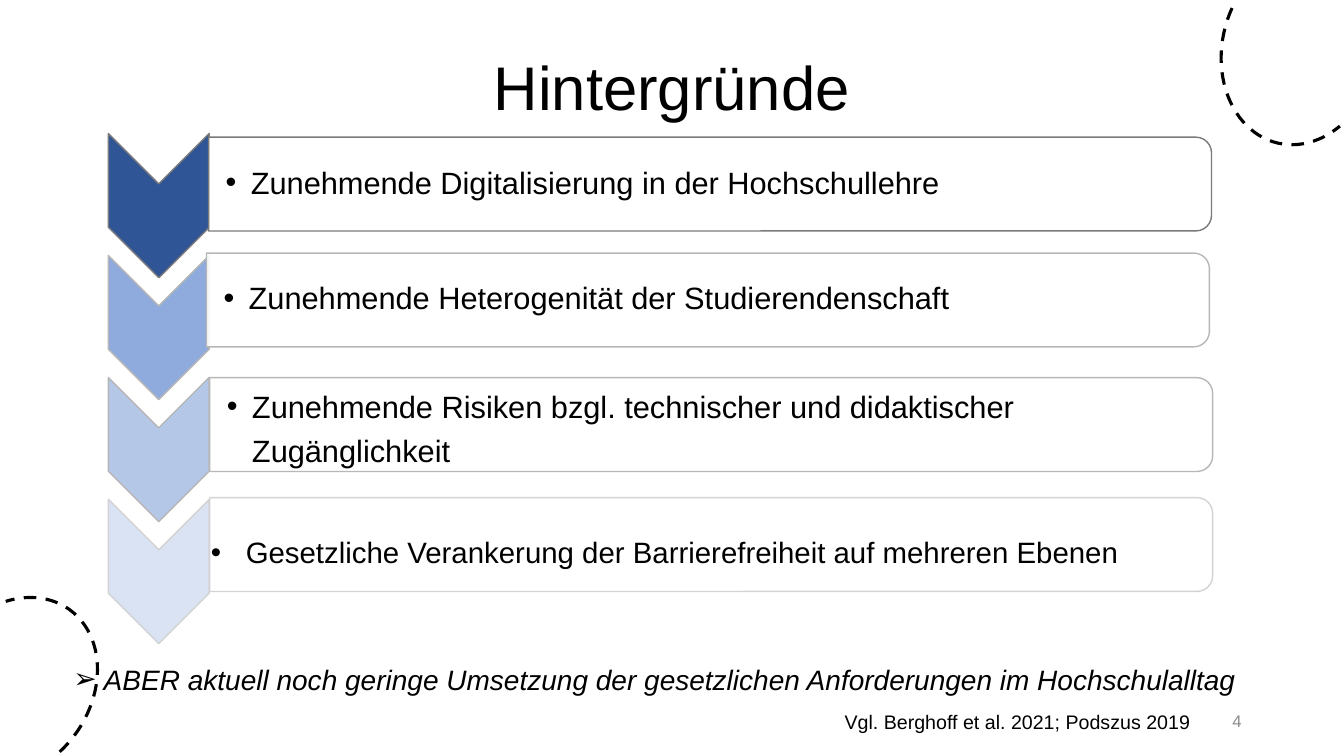
from dataclasses import dataclass

from lxml.etree import SubElement
from pptx import Presentation
from pptx.dml.color import RGBColor
from pptx.enum.dml import MSO_LINE
from pptx.enum.shapes import MSO_SHAPE
from pptx.enum.text import MSO_ANCHOR, MSO_AUTO_SIZE, PP_ALIGN
from pptx.oxml.ns import qn
from pptx.util import Pt


@dataclass(frozen=True)
class Theme:
    font: str = "Arial"
    text: str = "000000"
    muted: str = "8C8C8C"
    surface: str = "FFFFFF"
    title_size: int = 44
    point_size: int = 22
    law_size: int = 21
    conclusion_size: int = 20
    source_size: int = 14
    number_size: int = 12


def apply_values(target, values):
    for name, value in values.items():
        setattr(target, name, value)


class SlideBuilder:
    def __init__(self, slide, theme):
        self.slide = slide
        self.theme = theme

    def fill_frame(self, frame, text, size, color=None, italic=False, bullet=None,
                   indent=0, insets=None, paragraph_format=None, frame_format=None):
        """Fill a text frame; insets run left, top, right, bottom."""
        apply_values(frame, {"word_wrap": True, **(frame_format or {})})
        if insets:
            sides = ("left", "top", "right", "bottom")
            apply_values(frame, {f"margin_{side}": Pt(inset)
                                 for side, inset in zip(sides, insets)})
        paragraph = frame.paragraphs[0]
        paragraph.text = text
        apply_values(paragraph, {"alignment": PP_ALIGN.LEFT, **(paragraph_format or {})})
        if bullet:
            properties = paragraph._p.get_or_add_pPr()
            properties.set("marL", str(Pt(indent)))
            properties.set("indent", str(-Pt(indent)))
            SubElement(properties, qn("a:buFont")).set("typeface", self.theme.font)
            SubElement(properties, qn("a:buChar")).set("char", bullet)
        font = paragraph.runs[0].font
        apply_values(font, {"name": self.theme.font, "size": Pt(size), "italic": italic})
        font.color.rgb = RGBColor.from_string(color or self.theme.text)

    def text(self, left, top, width, height, text, size, **style):
        box = self.slide.shapes.add_textbox(Pt(left), Pt(top), Pt(width), Pt(height))
        self.fill_frame(box.text_frame, text, size, **style)

    def shape(self, kind, left, top, width, height, line, line_width=1, fill=None, rotation=0):
        shape = self.slide.shapes.add_shape(kind, Pt(left), Pt(top), Pt(width), Pt(height))
        shape.shadow.inherit = False
        shape.rotation = rotation
        if fill:
            shape.fill.solid()
            shape.fill.fore_color.rgb = RGBColor.from_string(fill)
        else:
            shape.fill.background()
        shape.line.color.rgb = RGBColor.from_string(line)
        shape.line.width = Pt(line_width)
        return shape

    def quarter_turned(self, kind, left, top, width, height, line, fill):
        """Place a shape turned by 90° so that it covers the given box."""
        shift = (width - height) / 2
        return self.shape(kind, left + shift, top - shift, height, width,
                          line, fill=fill, rotation=90)

    def chevron(self, left, top, width, height, line, fill):
        self.quarter_turned(MSO_SHAPE.CHEVRON, left, top, width, height, line, fill)

    def bar(self, left, top, width, height, line):
        bar = self.quarter_turned(MSO_SHAPE.ROUND_2_SAME_RECTANGLE, left, top,
                                  width, height, line, self.theme.surface)
        color = bar._element.spPr.find(qn("a:solidFill"))[0]
        SubElement(color, qn("a:alpha")).set("val", "90000")
        return bar

    def dashed_arc(self, left, top, width, height, rotation):
        arc = self.shape(MSO_SHAPE.ARC, left, top, width, height, self.theme.text,
                         line_width=2.25, rotation=rotation)
        arc.adjustments[0], arc.adjustments[1] = 151.51, 24.23
        arc.line.dash_style = MSO_LINE.DASH
        arc._element.spPr.find(qn("a:xfrm")).set("flipH", "1")


def add_backgrounds(builder):
    """Four chevrons, each pointing down beside its bar."""
    theme = builder.theme
    middle = {"vertical_anchor": MSO_ANCHOR.MIDDLE}
    bar_width, bar_height, text_height = 716.4, 67, 60.5
    points = [
        ("Zunehmende Digitalisierung in der Hochschullehre",
         "2F5597", "7A7A7A", 149, 98, 0.9),
        ("Zunehmende Heterogenität der Studierendenschaft",
         "8FAADC", "B7B7B7", 147.5, 180.8, 0.9),
        ("Zunehmende Risiken bzgl. technischer und didaktischer Zugänglichkeit",
         "B4C7E7", "B7B7B7", 149.8, 269.8, 1.2),
        ("Gesetzliche Verankerung der Barrierefreiheit auf mehreren Ebenen",
         "DAE3F3", "D3D3D3", 149.8, 355.5, None),
    ]
    for index, (text, fill, line, left, top, spacing) in enumerate(points):
        builder.chevron(77.4, 95.4 + 87.1 * index, 72, 103, line, fill)
        bar = builder.bar(left, top, bar_width, bar_height, line)
        if spacing:
            builder.text(left, top + (bar_height - text_height) / 2, 713, text_height,
                         text, theme.point_size, bullet="•", indent=18,
                         insets=(12.2, 1.4, 1.4, 1.4), frame_format=middle,
                         paragraph_format={"line_spacing": spacing})
        else:
            builder.fill_frame(bar.text_frame, text, theme.law_size, bullet="•", indent=25,
                               insets=(11.5, 0.7, 0.7, 0.7), frame_format=middle)
            bar._element.txBody.find(qn("a:bodyPr")).set("vert", "vert270")


def main():
    presentation = Presentation()
    apply_values(presentation, {"slide_width": Pt(960), "slide_height": Pt(540)})
    slide = presentation.slides.add_slide(presentation.slide_layouts[6])
    theme = Theme()
    builder = SlideBuilder(slide, theme)
    middle = {"vertical_anchor": MSO_ANCHOR.MIDDLE}
    grow = {"auto_size": MSO_AUTO_SIZE.SHAPE_TO_FIT_TEXT}

    builder.text(66, 12.2, 828, 104.4, "Hintergründe", theme.title_size, frame_format=middle,
                 paragraph_format={"alignment": PP_ALIGN.CENTER, "line_spacing": 0.9})
    add_backgrounds(builder)
    builder.text(45.4, 469.5, 883.4, 31,
                 "ABER aktuell noch geringe Umsetzung der gesetzlichen Anforderungen "
                 "im Hochschulalltag",
                 theme.conclusion_size, italic=True, bullet="➢", indent=21.6,
                 frame_format=grow)
    builder.text(596.2, 503.3, 321, 23.8, "Vgl. Berghoff et al. 2021; Podszus 2019",
                 theme.source_size, frame_format=grow)
    builder.text(678, 500.5, 216, 28.8, "4", theme.number_size, color=theme.muted,
                 frame_format=middle, paragraph_format={"alignment": PP_ALIGN.RIGHT})
    for left, top, rotation in ((859, -20.9, 283.2), (-60.5, 436.3, 125.9)):
        builder.dashed_arc(left, top, 139, 110.9, rotation)

    presentation.save("out.pptx")


if __name__ == "__main__":
    main()
